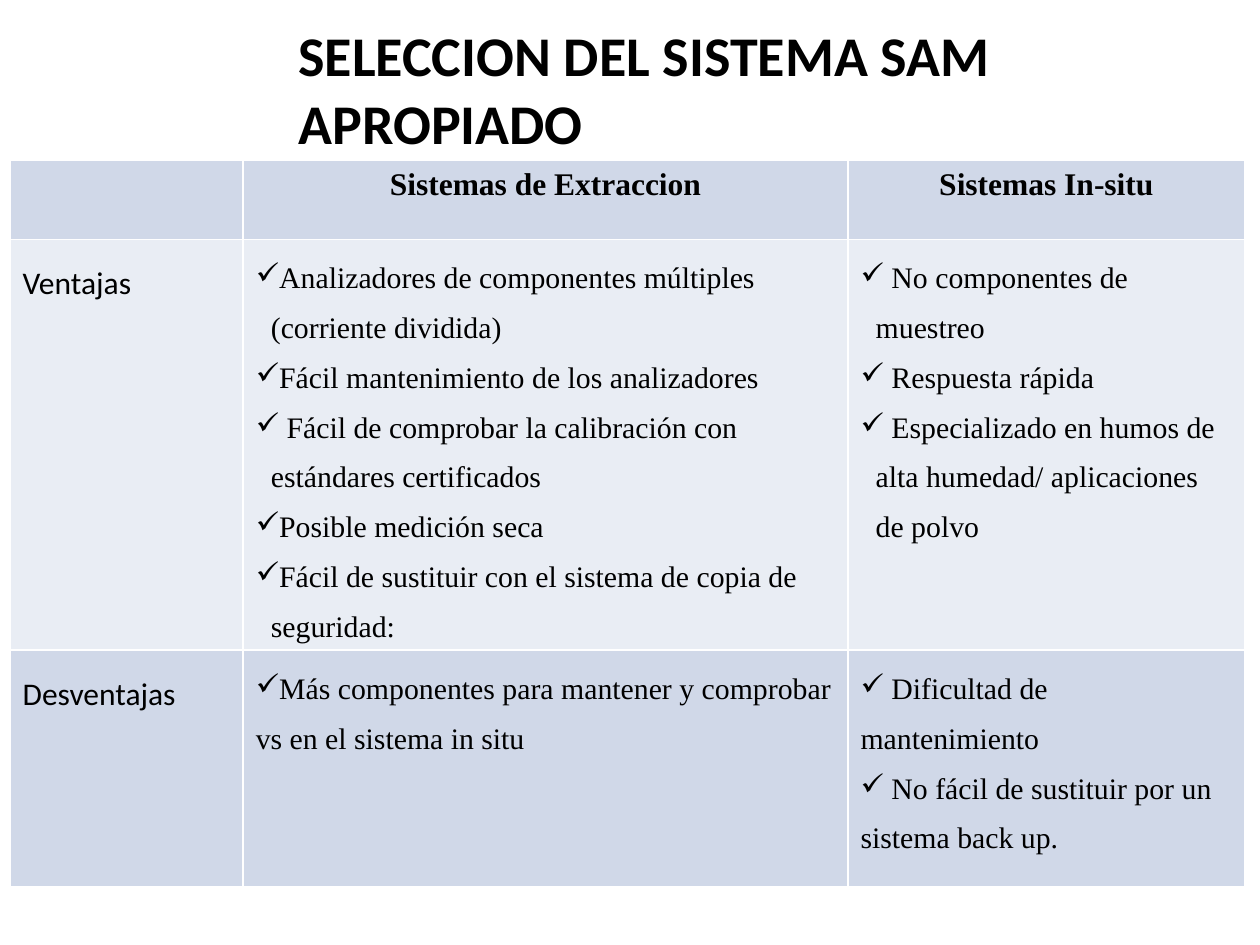
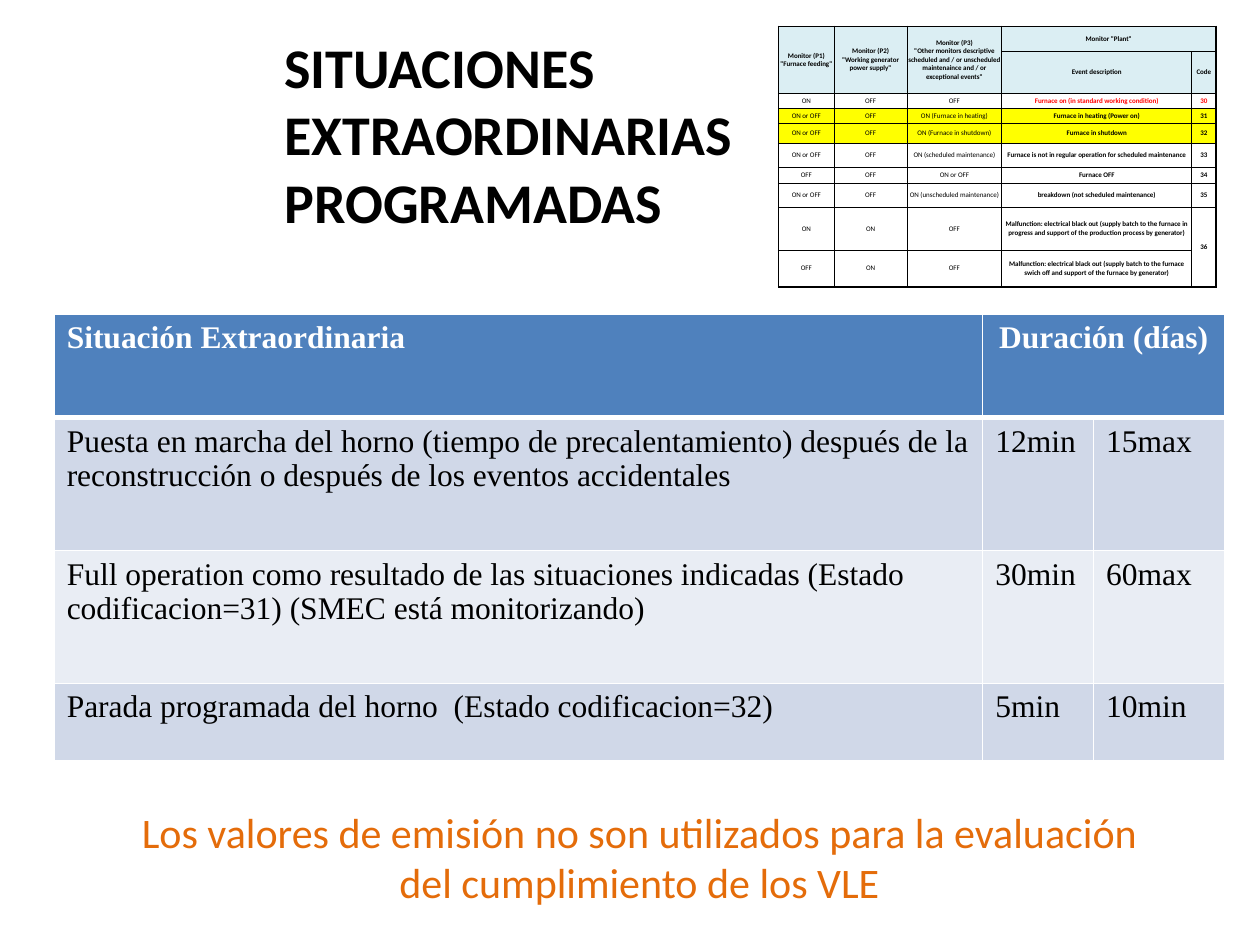
import pptx
import pptx.util
import pptx.dml.color
import pptx.enum.text
import pptx.oxml.ns
from lxml import etree

RGB = pptx.dml.color.RGBColor
ALIGN = pptx.enum.text.PP_ALIGN
ANCHOR = pptx.enum.text.MSO_ANCHOR
qn = pptx.oxml.ns.qn

BLACK = RGB(0x00, 0x00, 0x00)
WHITE = RGB(0xFF, 0xFF, 0xFF)
BLUE = RGB(0x4F, 0x81, 0xBD)
BAND_DARK = RGB(0xD0, 0xD8, 0xE8)
BAND_LIGHT = RGB(0xE9, 0xED, 0xF4)
HEADER_CYAN = RGB(0xDB, 0xEE, 0xF3)
YELLOW = RGB(0xFF, 0xFF, 0x00)
RED = RGB(0xFF, 0x00, 0x00)
ORANGE = RGB(0xE4, 0x6C, 0x0A)

SANS = "Calibri"
SERIF = "Times New Roman"
WIDTH, HEIGHT = pptx.util.Inches(10), pptx.util.Inches(7.5)
GRID_COLUMNS, GRID_ROWS = 100, 75

VENTAJAS_EXTRACCION = [
    "Analizadores de componentes múltiples (corriente dividida)",
    "Fácil mantenimiento de los analizadores",
    " Fácil de comprobar la calibración con estándares certificados",
    "Posible medición seca",
    "Fácil de sustituir con el sistema de copia de seguridad:",
]
VENTAJAS_IN_SITU = [
    " No componentes de muestreo",
    " Respuesta rápida",
    " Especializado en humos de alta humedad/ aplicaciones de polvo",
]
DESVENTAJAS_EXTRACCION = [
    "Más componentes para mantener y comprobar vs en el sistema in situ",
]
DESVENTAJAS_IN_SITU = [
    " Dificultad de mantenimiento",
    " No fácil de sustituir por un sistema back up.",
]
DURACIONES = [
    ["Situación Extraordinaria", "Duración (días)", ""],
    ["Puesta en marcha del horno (tiempo de precalentamiento) después de la "
     "reconstrucción o después de los eventos accidentales", "12min", "15max"],
    ["Full operation como resultado de las situaciones indicadas (Estado "
     "codificacion=31) (SMEC está monitorizando)", "30min", "60max"],
    ["Parada programada del horno  (Estado codificacion=32)", "5min", "10min"],
]
MONITORES = [
    ['Monitor (P1)\n"Furnace feeding"',
     'Monitor (P2)\n"Working generator power supply"',
     'Monitor (P3)\n"Other monitors descriptive scheduled and / or unscheduled '
     'maintenaince and / or exceptional events"',
     'Monitor "Plant"', ""],
    ["", "", "", "Event description", "Code"],
    ["ON", "OFF", "OFF", "Furnace on (in standard working condition)", "30"],
    ["ON or OFF", "OFF", "ON (Furnace in heating)",
     "Furnace in heating (Power on)", "31"],
    ["ON or OFF", "OFF", "ON (Furnace in shutdown)", "Furnace in shutdown", "32"],
    ["ON or OFF", "OFF", "ON (scheduled maintenance)",
     "Furnace is not in regular operation for scheduled maintenance", "33"],
    ["OFF", "OFF", "ON or OFF", "Furnace OFF", "34"],
    ["ON or OFF", "OFF", "ON (unscheduled maintenance)",
     "breakdown (not scheduled maintenance)", "35"],
    ["ON", "ON", "OFF",
     "Malfunction: electrical black out (supply batch to the furnace in progress "
     "and support of the production process by generator)", "36"],
    ["OFF", "ON", "OFF",
     "Malfunction: electrical black out (supply batch to the furnace swich off "
     "and support of the furnace by generator)", ""],
]


def across(columns):
    return round(WIDTH * columns / GRID_COLUMNS)


def down(rows):
    return round(HEIGHT * rows / GRID_ROWS)


def set_font(paragraph, name, size, color=BLACK, bold=False):
    font = paragraph.font
    font.name, font.size, font.bold = name, pptx.util.Pt(size), bold
    font.color.rgb = color


def write(frame, lines, name, size, color=BLACK, bold=False, align=ALIGN.LEFT,
          spacing=None, check_margin=None):
    for index, line in enumerate(lines):
        paragraph = frame.add_paragraph() if index else frame.paragraphs[0]
        paragraph.text = line
        paragraph.alignment = align
        if spacing:
            paragraph.line_spacing = spacing
        if check_margin is not None:
            add_check(paragraph, check_margin)
        set_font(paragraph, name, size, color, bold)


def add_check(paragraph, margin):
    properties = paragraph._p.get_or_add_pPr()
    properties.set("marL", str(across(margin)))
    properties.set("indent", str(-across(1.2)))
    etree.SubElement(properties, qn("a:buChar")).set("char", "✓")


def add_text(slide, left, top, width, height, lines, size, anchor=ANCHOR.TOP, **style):
    box = slide.shapes.add_textbox(across(left), down(top), across(width), down(height))
    box.text_frame.word_wrap = True
    box.text_frame.vertical_anchor = anchor
    write(box.text_frame, lines, SANS, size, **style)


def add_title(slide, left, top, width, height, text, **style):
    add_text(slide, left, top, width, height, [text], 32, bold=True, **style)


def add_grid(slide, left, top, widths, heights, merges=()):
    frame = slide.shapes.add_table(
        len(heights), len(widths), across(left), down(top),
        across(sum(widths)), down(sum(heights)))
    table = frame.table
    table.first_row = table.horz_banding = False
    for column, width in zip(table.columns, widths):
        column.width = across(width)
    for row, height in zip(table.rows, heights):
        row.height = down(height)
    for first, last in merges:
        table.cell(*first).merge(table.cell(*last))
    return table


def draw_edge(cell, side, color, weight):
    line = etree.SubElement(cell._tc.get_or_add_tcPr(), qn("a:ln" + side))
    line.set("w", str(pptx.util.Pt(weight)))
    fill = etree.SubElement(line, qn("a:solidFill"))
    etree.SubElement(fill, qn("a:srgbClr")).set("val", str(color))


def rule_cells(table, color, weight, heavy=1, heavy_rows=(), heavy_columns=()):
    for r in range(len(table.rows)):
        for c in range(len(table.columns)):
            cell = table.cell(r, c)
            if cell.is_spanned:
                continue
            bottom = r + (cell.span_height if cell.is_merge_origin else 1)
            right = c + (cell.span_width if cell.is_merge_origin else 1)
            for side, edge, heavies in (("L", c, heavy_columns), ("R", right, heavy_columns),
                                        ("T", r, heavy_rows), ("B", bottom, heavy_rows)):
                draw_edge(cell, side, color, heavy if edge in heavies else weight)


def paint(cell, color):
    if color is None:
        cell.fill.background()
    else:
        cell.fill.solid()
        cell.fill.fore_color.rgb = color


def add_comparison(slide):
    table = add_grid(slide, 0.8, 12.75, [18.5, 48, 31.5], [6.25, 32.6, 18.8])
    rule_cells(table, WHITE, 1)
    for row, band in zip(table.rows, (BAND_DARK, BAND_LIGHT, BAND_DARK)):
        for cell in row.cells:
            paint(cell, band)
    for c, heading in enumerate(("Sistemas de Extraccion", "Sistemas In-situ"), 1):
        write(table.cell(0, c).text_frame, [heading], SERIF, 18, bold=True,
              align=ALIGN.CENTER)
    aspects = [("Ventajas", 1.2, VENTAJAS_EXTRACCION, VENTAJAS_IN_SITU),
               ("Desventajas", 0, DESVENTAJAS_EXTRACCION, DESVENTAJAS_IN_SITU)]
    for r, (aspect, margin, *lists) in enumerate(aspects, 1):
        write(table.cell(r, 0).text_frame, [aspect], SANS, 18, spacing=1.5)
        for c, points in enumerate(lists, 1):
            write(table.cell(r, c).text_frame, points, SERIF, 17, spacing=1.5,
                  check_margin=margin)


def add_durations(slide):
    table = add_grid(slide, 4.3, 24.9, [73.7, 8.8, 10.4], [8.25, 10.55, 10.55, 6.1],
                     [((0, 1), (0, 2))])
    rule_cells(table, WHITE, 1, heavy=3, heavy_rows=(1,))
    for r, values in enumerate(DURACIONES):
        header = r == 0
        band = BLUE if header else (BAND_LIGHT, BAND_DARK)[r % 2]
        for c, value in enumerate(values):
            cell = table.cell(r, c)
            paint(cell, band)
            write(cell.text_frame, [value], SERIF, 18, WHITE if header else BLACK, header,
                  ALIGN.CENTER if header and c else ALIGN.LEFT)


def add_monitor_codes(slide):
    merges = [((0, c), (1, c)) for c in range(3)]
    merges += [((0, 3), (0, 4)), ((8, 4), (9, 4))]
    table = add_grid(slide, 6.18 * 10, 2.1, [4.4, 5.8, 7.5, 15.1, 1.9],
                     [2, 3.3, 1.2, 1.2, 1.55, 1.95, 1.2, 1.95, 3.4, 2.9], merges)
    rule_cells(table, BLACK, 0.5, heavy_rows=(0, 2, 10), heavy_columns=(0, 5))
    fills = {0: HEADER_CYAN, 1: HEADER_CYAN, 3: YELLOW, 4: YELLOW}
    for r, values in enumerate(MONITORES):
        for c, value in enumerate(values):
            cell = table.cell(r, c)
            cell.margin_left = cell.margin_right = cell.margin_top = cell.margin_bottom = 0
            cell.vertical_anchor = ANCHOR.MIDDLE
            paint(cell, fills.get(r))
            event = c >= 3
            write(cell.text_frame, [value], SANS, 4, RED if r == 2 and event else BLACK,
                  r < 2 or event, ALIGN.CENTER)


def main():
    deck = pptx.Presentation()
    deck.slide_width, deck.slide_height = WIDTH, HEIGHT
    blank = deck.slide_layouts[6]

    selection = deck.slides.add_slide(blank)
    add_comparison(selection)
    add_title(selection, 22.7, 2.3, 75, 9.4, "SELECCION DEL SISTEMA SAM APROPIADO",
              anchor=ANCHOR.MIDDLE)

    situations = deck.slides.add_slide(blank)
    add_durations(situations)
    add_title(situations, 21.6, 2.1, 38.6, 6.2, "SITUACIONES EXTRAORDINARIAS PROGRAMADAS",
              align=ALIGN.JUSTIFY)
    add_monitor_codes(situations)
    add_text(situations, 4.3, 63.5, 92.9, 9.1,
             ["Los valores de emisión no son utilizados para la evaluación",
              "del cumplimiento de los VLE"], 24, color=ORANGE, align=ALIGN.CENTER)

    deck.save("out.pptx")


if __name__ == "__main__":
    main()
